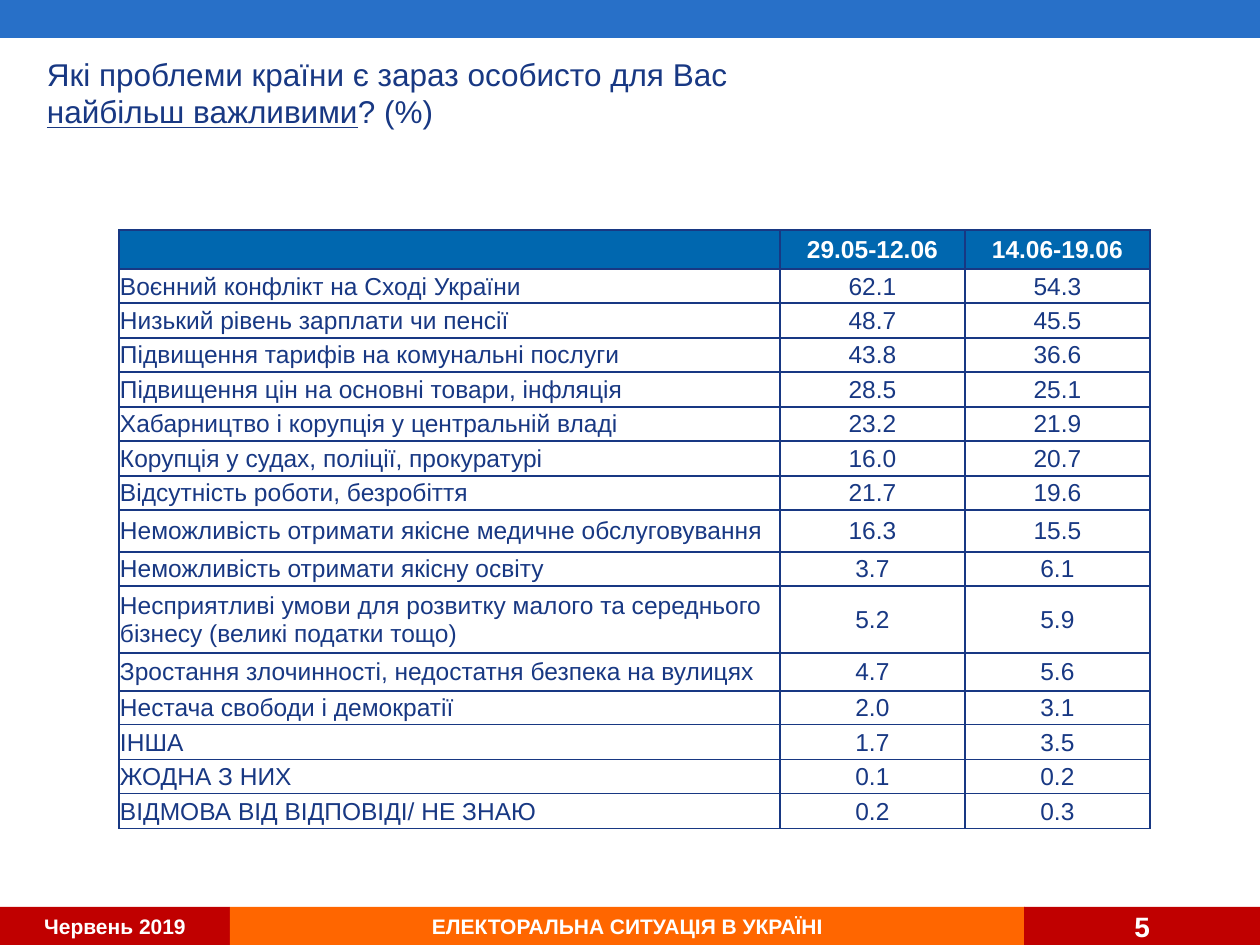
from dataclasses import dataclass

from lxml import etree
from pptx import Presentation
from pptx import util as u
from pptx.dml.color import RGBColor
from pptx.enum import shapes, text
from pptx.oxml.ns import qn


@dataclass(frozen=True)
class Theme:
    font: str = "Arial"
    navy: str = "183883"
    white: str = "FFFFFF"
    banner: str = "2870C8"
    header: str = "0067AF"
    red: str = "C00000"
    orange: str = "FF6600"
    title_size: int = 18
    table_size: int = 14
    footer_size: int = 12
    number_size: int = 16


THEME = Theme()
EMU_PER_PX = 914400 / 126
COLUMN_WIDTHS = (661, 185, 185)
HEADER_ROW = (39, "", "29.05-12.06", "14.06-19.06")
PROBLEM_ROWS = (
    (34, "Воєнний конфлiкт на Сходi України", "62.1", "54.3"),
    (35, "Низький рiвень зарплати чи пенсiї", "48.7", "45.5"),
    (34, "Пiдвищення тарифiв на комунальнi послуги", "43.8", "36.6"),
    (35, "Пiдвищення цiн на основнi товари, iнфляцiя", "28.5", "25.1"),
    (34, "Хабарництво i корупцiя у центральнiй владi", "23.2", "21.9"),
    (35, "Корупцiя у судах, поліції, прокуратурi", "16.0", "20.7"),
    (34, "Вiдсутнiсть роботи, безробiття", "21.7", "19.6"),
    (42, "Неможливiсть отримати якiсне медичне обслуговування", "16.3", "15.5"),
    (34, "Неможливiсть отримати якiсну освiту", "3.7", "6.1"),
    (67, "Несприятливi умови для розвитку малого та середнього бiзнесу "
         "(великi податки тощо)", "5.2", "5.9"),
    (38, "Зростання злочинностi, недостатня безпека на вулицях", "4.7", "5.6"),
    (34, "Нестача свободи i демократiї", "2.0", "3.1"),
    (35, "IНША", "1.7", "3.5"),
    (34, "ЖОДНА З НИХ", "0.1", "0.2"),
    (35, "ВIДМОВА ВIД ВIДПОВIДI/ НЕ ЗНАЮ", "0.2", "0.3"),
)


def px(length):
    return u.Emu(round(length * EMU_PER_PX))


def set_margins(target, left, top, right, bottom):
    target.margin_left, target.margin_top = px(left), px(top)
    target.margin_right, target.margin_bottom = px(right), px(bottom)


def style_font(font, size, color, bold=False):
    font.name = THEME.font
    font.size = u.Pt(size)
    font.bold = bold
    font.color.rgb = RGBColor.from_string(color)


def add_band(slide, box, color):
    shape = slide.shapes.add_shape(shapes.MSO_SHAPE.RECTANGLE, *map(px, box))
    shape.shadow.inherit = False
    shape.fill.solid()
    shape.fill.fore_color.rgb = RGBColor.from_string(color)
    shape.line.fill.background()
    return shape


def add_label(band, label, size, alignment, right_margin=13):
    frame = band.text_frame
    frame.word_wrap = True
    frame.vertical_anchor = text.MSO_ANCHOR.MIDDLE
    set_margins(frame, 13, 0, right_margin, 0)
    frame.text = label
    paragraph = frame.paragraphs[0]
    paragraph.alignment = alignment
    style_font(paragraph.runs[0].font, size, THEME.white, bold=True)


def add_footer(slide, box):
    left, top, width, height = box
    date_width, number_left = 230, 1024
    date = add_band(slide, (left, top, date_width, height), THEME.red)
    topic = add_band(slide, (left + date_width, top, 795, height), THEME.orange)
    number = add_band(slide, (left + number_left, top, width - number_left, height), THEME.red)
    add_label(date, "Червень 2019", THEME.footer_size, text.PP_ALIGN.CENTER)
    add_label(topic, "ЕЛЕКТОРАЛЬНА СИТУАЦІЯ В УКРАЇНІ", THEME.footer_size, text.PP_ALIGN.CENTER)
    add_label(number, "5", THEME.number_size, text.PP_ALIGN.RIGHT, right_margin=110)


def add_title(slide, box):
    frame = slide.shapes.add_textbox(*map(px, box)).text_frame
    frame.word_wrap = True
    frame.vertical_anchor = text.MSO_ANCHOR.MIDDLE
    set_margins(frame, 28, 6, 13, 6)
    paragraph = frame.paragraphs[0]
    for wording, underlined in (
        ("Які проблеми країни є зараз особисто для Вас", False),
        (" найбільш важливими", True),
        ("? (%)", False),
    ):
        run = paragraph.add_run()
        run.text = wording
        style_font(run.font, THEME.title_size, THEME.navy)
        run.font.underline = underlined


def add_borders(cell):
    properties = cell._tc.get_or_add_tcPr()
    for position, side in enumerate(("lnL", "lnR", "lnT", "lnB")):
        line = etree.Element(qn(f"a:{side}"), w=str(u.Pt(1)))
        fill = etree.SubElement(line, qn("a:solidFill"))
        etree.SubElement(fill, qn("a:srgbClr"), val=THEME.navy)
        properties.insert(position, line)


def fill_cell(cell, wording, alignment, color, background, bold):
    cell.fill.solid()
    cell.fill.fore_color.rgb = RGBColor.from_string(background)
    cell.vertical_anchor = text.MSO_ANCHOR.MIDDLE
    set_margins(cell, 1, 1, 1, 0)
    cell.text_frame.text = wording
    paragraph = cell.text_frame.paragraphs[0]
    paragraph.alignment = alignment
    style_font(paragraph.font, THEME.table_size, color, bold)
    for run in paragraph.runs:
        style_font(run.font, THEME.table_size, color, bold)
    add_borders(cell)


def add_problem_table(slide, box):
    rows = (HEADER_ROW, *PROBLEM_ROWS)
    table = slide.shapes.add_table(len(rows), len(COLUMN_WIDTHS), *map(px, box)).table
    table.horz_banding = False
    for column, width in zip(table.columns, COLUMN_WIDTHS):
        column.width = px(width)
    for row_index, (height, *wordings) in enumerate(rows):
        table.rows[row_index].height = px(height)
        is_header = row_index == 0
        color = THEME.white if is_header else THEME.navy
        background = THEME.header if is_header else THEME.white
        for column_index, wording in enumerate(wordings):
            alignment = text.PP_ALIGN.CENTER if column_index else text.PP_ALIGN.LEFT
            cell = table.cell(row_index, column_index)
            fill_cell(cell, wording, alignment, color, background, is_header)


def main():
    presentation = Presentation()
    presentation.slide_width, presentation.slide_height = px(1260), px(945)
    slide = presentation.slides.add_slide(presentation.slide_layouts[6])
    add_band(slide, (0, 0, 1260, 38), THEME.banner)
    add_footer(slide, (0, 907, 1260, 38))
    add_title(slide, (19, 42, 811, 101))
    add_problem_table(slide, (119, 230, 1031, 599))
    presentation.save("out.pptx")


if __name__ == "__main__":
    main()
